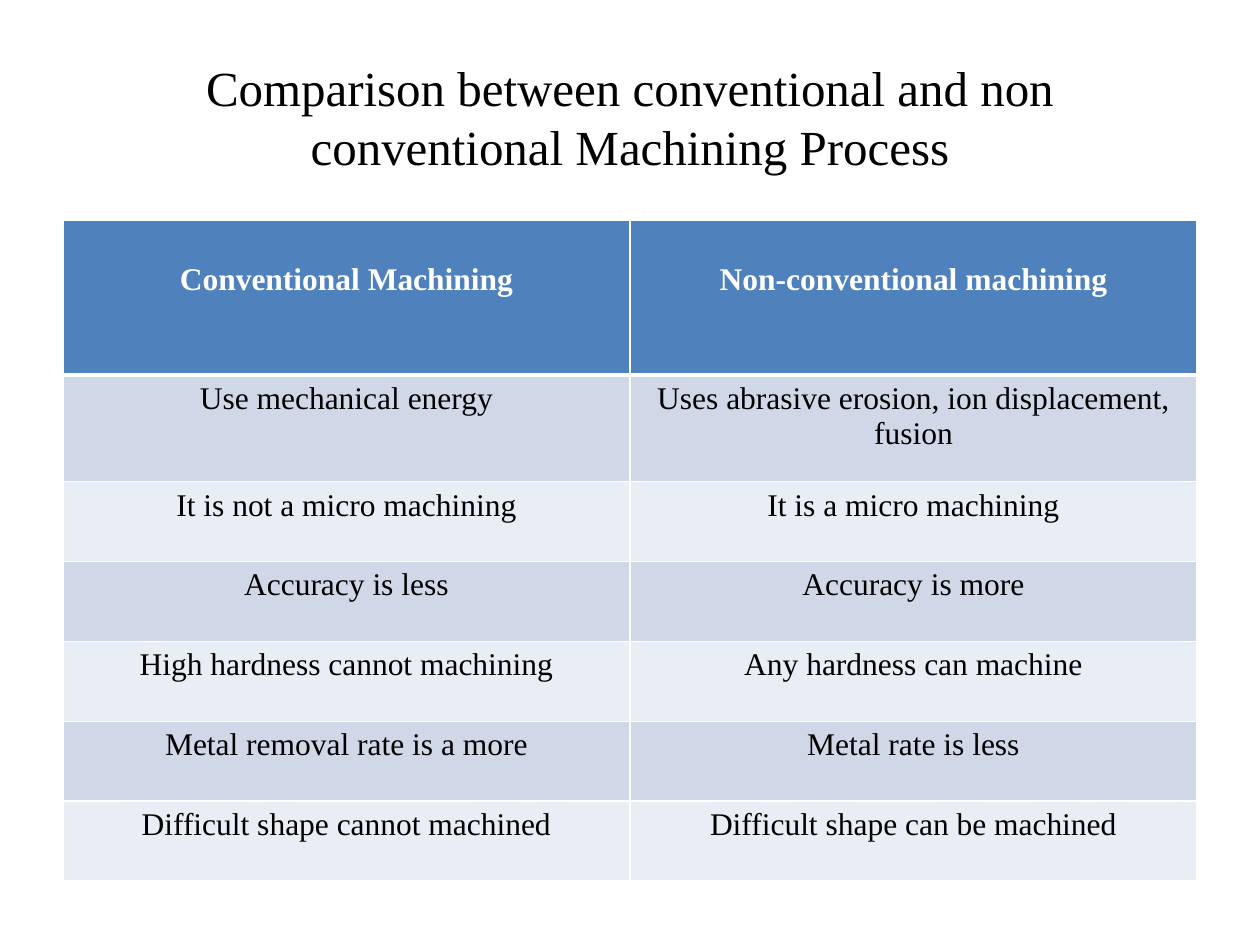
"""Build a slide that compares conventional and non-conventional machining."""
from lxml import etree
from pptx import Presentation
from pptx.dml.color import RGBColor
from pptx.enum.text import MSO_ANCHOR, PP_ALIGN
from pptx.oxml.ns import qn
from pptx.util import Cm, Pt

CENTER = PP_ALIGN.CENTER
MIDDLE = MSO_ANCHOR.MIDDLE
BLACK = RGBColor(0x00, 0x00, 0x00)
WHITE = RGBColor(0xFF, 0xFF, 0xFF)
BLUE = RGBColor(0x4F, 0x81, 0xBD)
BANDS = (RGBColor(0xE9, 0xED, 0xF4), RGBColor(0xD0, 0xD8, 0xE8))

TITLE = "Comparison between conventional and non conventional Machining Process"
ROWS = [
    ("Conventional Machining", "Non-conventional machining"),
    ("Use mechanical energy", "Uses abrasive erosion, ion displacement, fusion"),
    ("It is not a micro machining", "It is a micro machining"),
    ("Accuracy is less", "Accuracy is more"),
    ("High hardness cannot machining", "Any hardness can machine"),
    ("Metal removal rate is a more", "Metal rate is less"),
    ("Difficult shape cannot machined", "Difficult shape can be machined"),
]
HEADER_HEIGHT, WRAPPED_HEIGHT, ROW_HEIGHT = Cm(3.11), Cm(2.15), Cm(1.61)
HEIGHTS = [HEADER_HEIGHT, WRAPPED_HEIGHT] + [ROW_HEIGHT] * (len(ROWS) - 2)
LEFT, WIDTH = Cm(1.27), Cm(22.86)
HEADER_MARGIN = Cm(0.83)

TITLE_FONT = {"name": "Times New Roman", "size": Pt(28), "bold": False}
HEADER_FONT = {"name": "Times New Roman", "size": Pt(18), "bold": True}
BODY_FONT = {**HEADER_FONT, "bold": False}


def write(frame, text, font, color):
    paragraph = frame.paragraphs[0]
    paragraph.alignment = CENTER
    span = paragraph.add_run()
    span.text = text
    for name, value in font.items():
        setattr(span.font, name, value)
    span.font.color.rgb = color


def draw_borders(cell, widths):
    properties = cell._tc.get_or_add_tcPr()
    for side, width in widths.items():
        line = etree.SubElement(properties, qn(f"a:ln{side}"), w=str(Pt(width)))
        fill = etree.SubElement(line, qn("a:solidFill"))
        etree.SubElement(fill, qn("a:srgbClr"), val=str(WHITE))


def add_title(page):
    box = page.shapes.add_textbox(LEFT, Cm(0.76), WIDTH, Cm(3.18))
    box.text_frame.word_wrap = True
    box.text_frame.vertical_anchor = MIDDLE
    write(box.text_frame, TITLE, TITLE_FONT, BLACK)


def add_comparison(page):
    columns = len(ROWS[0])
    table = page.shapes.add_table(
        len(ROWS), columns, LEFT, Cm(4.45), WIDTH, sum(HEIGHTS)
    ).table
    for column in table.columns:
        column.width = WIDTH // columns
    for index, (texts, height) in enumerate(zip(ROWS, HEIGHTS)):
        table.rows[index].height = height
        header = index == 0
        font, color = (HEADER_FONT, WHITE) if header else (BODY_FONT, BLACK)
        top, bottom = 3 if index == 1 else 1, 3 if header else 1
        for position, text in enumerate(texts):
            cell = table.cell(index, position)
            draw_borders(cell, {"L": 1, "R": 1, "T": top, "B": bottom})
            cell.fill.solid()
            cell.fill.fore_color.rgb = BLUE if header else BANDS[index % 2]
            if header:
                cell.margin_top = HEADER_MARGIN
            write(cell.text_frame, text, font, color)


def main():
    deck = Presentation()
    deck.slide_width, deck.slide_height = Cm(25.4), Cm(19.05)
    page = deck.slides.add_slide(deck.slide_layouts[6])
    add_title(page)
    add_comparison(page)
    deck.save("out.pptx")


if __name__ == "__main__":
    main()
